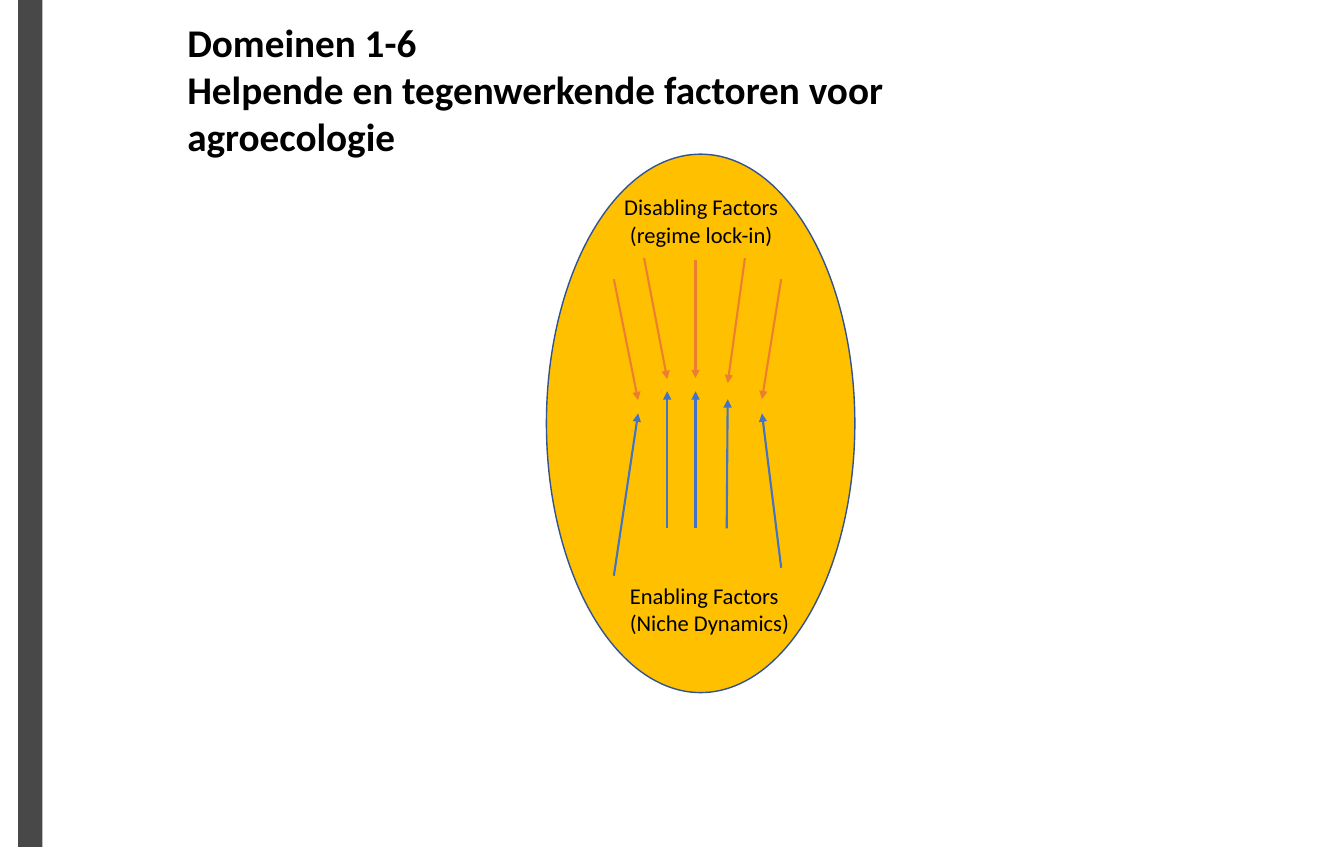
import pptx
import pptx.util
import pptx.dml.color
import pptx.enum.shapes
import pptx.enum.text
import pptx.oxml
import pptx.oxml.ns

Pt = pptx.util.Pt
RGBColor = pptx.dml.color.RGBColor
MSO_SHAPE = pptx.enum.shapes.MSO_SHAPE
PP_ALIGN = pptx.enum.text.PP_ALIGN

BLACK = RGBColor(0x00, 0x00, 0x00)
GREY = RGBColor(0x47, 0x48, 0x47)
GOLD = RGBColor(0xFF, 0xC0, 0x00)
NAVY = RGBColor(0x31, 0x53, 0x8F)
ORANGE = RGBColor(0xED, 0x7D, 0x31)
BLUE = RGBColor(0x44, 0x72, 0xC4)


class Deck:
    font = "Calibri"
    arrow_width = 1.5

    def __init__(self, width, height):
        self.prs = pptx.Presentation()
        self.prs.slide_width = Pt(width)
        self.prs.slide_height = Pt(height)
        self.s = self.prs.slides.add_slide(self.prs.slide_layouts[6])

    def shape(self, kind, x, y, w, h, fill, line=None, rotation=0):
        sp = self.s.shapes.add_shape(kind, Pt(x), Pt(y), Pt(w), Pt(h))
        sp.shadow.inherit = False
        sp.rotation = rotation
        sp.fill.solid()
        sp.fill.fore_color.rgb = fill
        if line is None:
            sp.line.fill.background()
        else:
            sp.line.color.rgb = line
            sp.line.width = Pt(1)

    def arrow(self, start, end, color):
        cx = self.s.shapes.add_connector(
            pptx.enum.shapes.MSO_CONNECTOR.STRAIGHT,
            Pt(start[0]), Pt(start[1]), Pt(end[0]), Pt(end[1]))
        cx.line.color.rgb = color
        cx.line.width = Pt(self.arrow_width)
        ln = cx.line._get_or_add_ln()
        tail = pptx.oxml.ns.qn("a:tailEnd")
        ln.append(ln.makeelement(tail, {"type": "triangle"}))
        spPr = cx._element.spPr
        spPr.append(spPr.makeelement(pptx.oxml.ns.qn("a:effectLst"), {}))

    def text(self, text, x, y, w, h, size, bold=False, align=PP_ALIGN.LEFT):
        tf = self.s.shapes.add_textbox(Pt(x), Pt(y), Pt(w), Pt(h)).text_frame
        tf.word_wrap = True
        tf.text = text
        for p in tf.paragraphs:
            p.alignment = align
            for r in p.runs:
                r.font.name = self.font
                r.font.size = Pt(size)
                r.font.bold = bold
                r.font.color.rgb = BLACK


DISABLING_ARROWS = [
    ((460.1, 184.3), (476.6, 270.7)),
    ((496.8, 185.8), (496.8, 270)),
    ((532.1, 184.3), (519.8, 273.6)),
    ((558, 199.4), (544.3, 285.1)),
    ((438.5, 199.4), (455.8, 285.8)),
]
ENABLING_ARROWS = [
    ((476.6, 377.3), (476.6, 279.4)),
    ((496.8, 377.3), (496.8, 279.4)),
    ((519.1, 377.3), (519.8, 285.1)),
    ((558, 405.4), (544.3, 295.2)),
    ((438.5, 411.1), (455.8, 295.2)),
]


def main():
    deck = Deck(960, 604.8)
    deck.shape(MSO_SHAPE.RECTANGLE, 13, 0, 17.3, 604.8, GREY)
    deck.shape(MSO_SHAPE.OVAL, 308.2, 192.2, 384.5, 220.3, GOLD, NAVY, 90)
    for color, arrows in ((ORANGE, DISABLING_ARROWS), (BLUE, ENABLING_ARROWS)):
        for start, end in arrows:
            deck.arrow(start, end, color)
    deck.text("Enabling Factors\n(Niche Dynamics)",
              442.8, 411.8, 129.6, 46.1, 16.1)
    deck.text("Disabling Factors\n(regime lock-in)",
              437.8, 134.6, 126, 46.1, 16.1, align=PP_ALIGN.CENTER)
    deck.text("Domeinen 1-6\nHelpende en tegenwerkende factoren voor agroecologie",
              126.7, 9.4, 600.5, 128.2, 28, bold=True)
    deck.prs.save("out.pptx")


if __name__ == "__main__":
    main()
